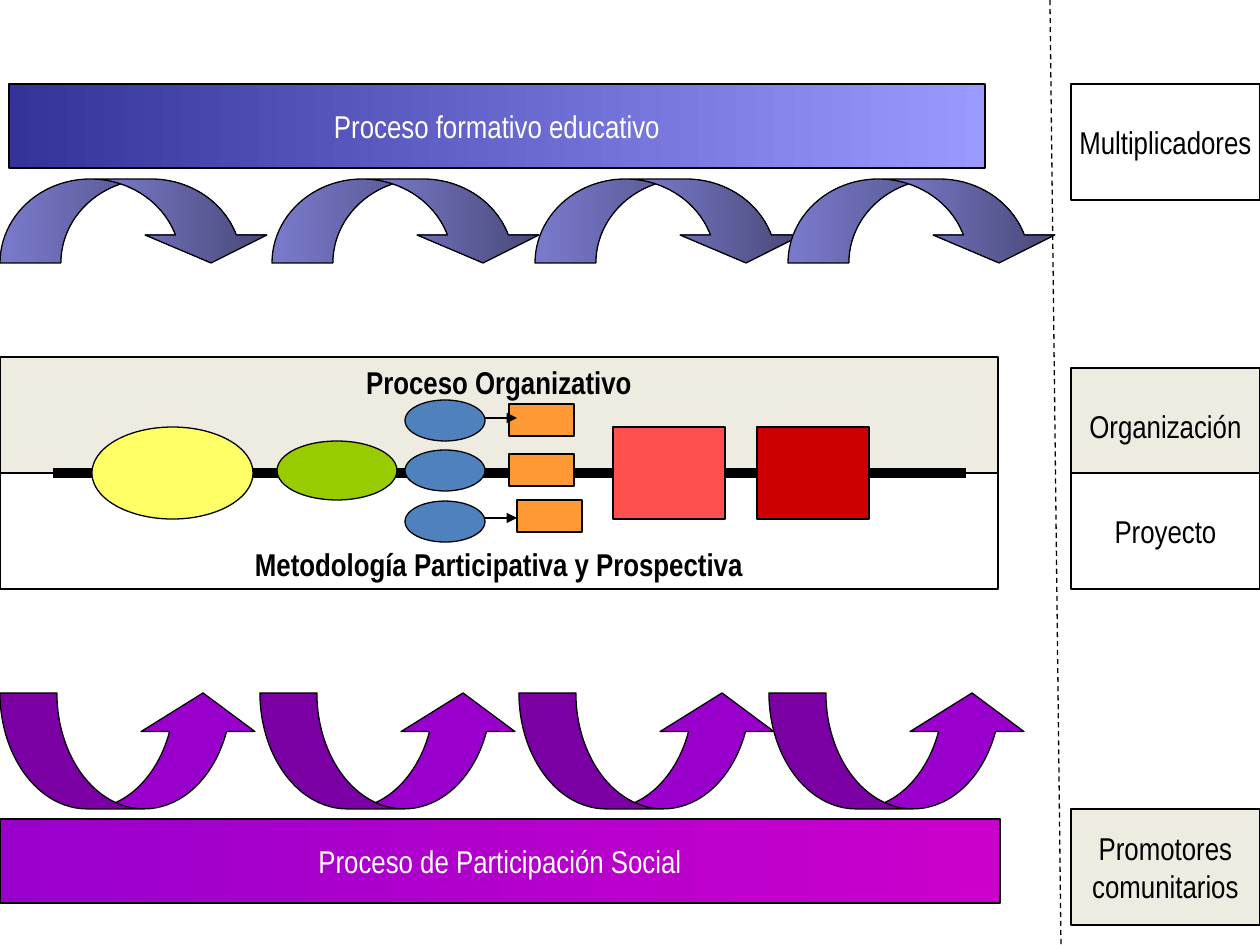
from lxml.etree import SubElement
from pptx import Presentation
from pptx.dml.color import RGBColor
from pptx.enum.dml import MSO_LINE_DASH_STYLE as DASH
from pptx.enum.shapes import MSO_CONNECTOR, MSO_SHAPE as SHAPE
from pptx.enum.text import MSO_ANCHOR as ANCHOR, PP_ALIGN
from pptx.oxml.ns import qn
from pptx.util import Pt

PX = 914400 / 126
FONT = "Arial Narrow"
COLORS = {
    "black": "000000", "white": "FFFFFF", "cream": "EEECE1",
    "navy": "333399", "lavender": "9999FF", "slate": "474776",
    "purple": "9900CC", "magenta": "CC00CC", "yellow": "FFFF66",
    "green": "99CC00", "blue": "4F81BD", "orange": "FF9933",
    "coral": "FF5050", "red": "CC0000",
}


def emu(px):
    """Convert slide pixels to EMU."""
    return round(px * PX)


def rgb(name):
    """Look up a named colour."""
    return RGBColor.from_string(COLORS[name])


def add_block(slide, kind, box, *fills):
    """Add an outlined shape with a solid fill or a two-colour gradient."""
    block = slide.shapes.add_shape(kind, *map(emu, box))
    block.shadow.inherit = False
    block.line.color.rgb = rgb("black")
    block.line.width = Pt(0.75)
    if len(fills) == 1:
        block.fill.solid()
        block.fill.fore_color.rgb = rgb(fills[0])
    else:
        block.fill.gradient()
        block.fill.gradient_angle = 0
        for stop, name in zip(block.fill.gradient_stops, fills):
            stop.color.rgb = rgb(name)
    return block


def add_label(block, wording, color="black", anchor=ANCHOR.MIDDLE, bold=False):
    """Write centred text in a shape."""
    frame = block.text_frame
    frame.text = wording
    frame.word_wrap = False
    frame.vertical_anchor = anchor
    for paragraph in frame.paragraphs:
        paragraph.alignment = PP_ALIGN.CENTER
        for run in paragraph.runs:
            run.font.name = FONT
            run.font.size = Pt(18)
            run.font.bold = bold
            run.font.color.rgb = rgb(color)


def add_line(slide, start, end, width=0.75, dash=None, arrow=False):
    """Draw a straight black line, optionally dashed or arrow-headed."""
    line = slide.shapes.add_connector(
        MSO_CONNECTOR.STRAIGHT, *map(emu, (*start, *end)))
    line.line.color.rgb = rgb("black")
    line.line.width = Pt(width)
    if dash:
        line.line.dash_style = dash
    if arrow:
        SubElement(line.line._get_or_add_ln(), qn("a:tailEnd"), type="triangle")
    SubElement(line._element.spPr, qn("a:effectLst"))


def add_arrow_row(slide, kind, box, offsets, adjustments, *fills):
    """Repeat a curved arrow at the given offsets from the box."""
    left, top, width, height = box
    for offset in offsets:
        arrow = add_block(slide, kind, (left + offset, top, width, height), *fills)
        for index, value in enumerate(adjustments):
            arrow.adjustments[index] = value


def add_training(slide, left, top):
    """Build the training banner and the arrows below it."""
    add_arrow_row(slide, SHAPE.CURVED_DOWN_ARROW, (left, top + 95, 272, 84),
                  (0, 272, 535, 788), (0.725, 1.45, 0.333), "lavender", "slate")
    banner = add_block(slide, SHAPE.RECTANGLE, (left + 9, top, 976, 84),
                       "navy", "lavender")
    add_label(banner, "Proceso formativo educativo", "white")


def add_participation(slide, left, top):
    """Build the participation banner and the arrows above it."""
    add_arrow_row(slide, SHAPE.CURVED_UP_ARROW, (left, top, 260, 116),
                  (0, 260, 519, 769), (0.491, 0.982, 0.333), "purple")
    banner = add_block(slide, SHAPE.RECTANGLE, (left, top + 126, 1000, 84),
                       "purple", "magenta")
    add_label(banner, "Proceso de Participación Social", "white")


def add_actors(slide, left, width, height):
    """Build the column of actors on the right."""
    for top, fill, wording in (
            (368, "cream", "Organización"),
            (473, "white", "Proyecto"),
            (809, "cream", "Promotores\ncomunitarios"),
            (84, "white", "Multiplicadores")):
        actor = add_block(slide, SHAPE.RECTANGLE, (left, top, width, height), fill)
        add_label(actor, wording)


def add_organization(slide, left, top, width, height):
    """Build the two halves of the organizing process and its timeline."""
    half = height // 2
    axis = top + half
    upper = add_block(slide, SHAPE.RECTANGLE, (left, top, width, half), "cream")
    add_label(upper, "Proceso Organizativo", anchor=ANCHOR.TOP, bold=True)
    lower = add_block(slide, SHAPE.RECTANGLE, (left, axis, width, half), "white")
    add_label(lower, "Metodología Participativa y Prospectiva",
              anchor=ANCHOR.BOTTOM, bold=True)

    add_line(slide, (left + 53, axis), (left + 966, axis), width=6)
    for kind, x, y, w, h, fill in (
            (SHAPE.OVAL, 92, -46, 161, 92, "yellow"),
            (SHAPE.OVAL, 277, -32, 120, 59, "green"),
            (SHAPE.RECTANGLE, 613, -46, 112, 92, "coral"),
            (SHAPE.RECTANGLE, 757, -46, 112, 92, "red")):
        add_block(slide, kind, (left + x, axis + y, w, h), fill)
    for y in (-73, -23, 28):
        add_block(slide, SHAPE.OVAL, (left + 405, axis + y, 80, 41), "blue")
    for x, y in ((509, -69), (509, -19), (517, 27)):
        add_block(slide, SHAPE.RECTANGLE, (left + x, axis + y, 65, 32), "orange")
    for y, length in ((-55, 32), (45, 32), (0, 0)):
        add_line(slide, (left + 485, axis + y), (left + 485 + length, axis + y),
                 arrow=True)


def main():
    """Assemble the slide and save it."""
    deck = Presentation()
    deck.slide_width, deck.slide_height = emu(1260), emu(945)
    slide = deck.slides.add_slide(deck.slide_layouts[6])
    add_training(slide, 0, 84)
    add_participation(slide, 0, 693)
    add_actors(slide, 1071, 189, 116)
    add_line(slide, (1050, 0), (1061, 945), dash=DASH.DASH)
    add_organization(slide, 0, 357, 998, 232)
    deck.save("out.pptx")


if __name__ == "__main__":
    main()
